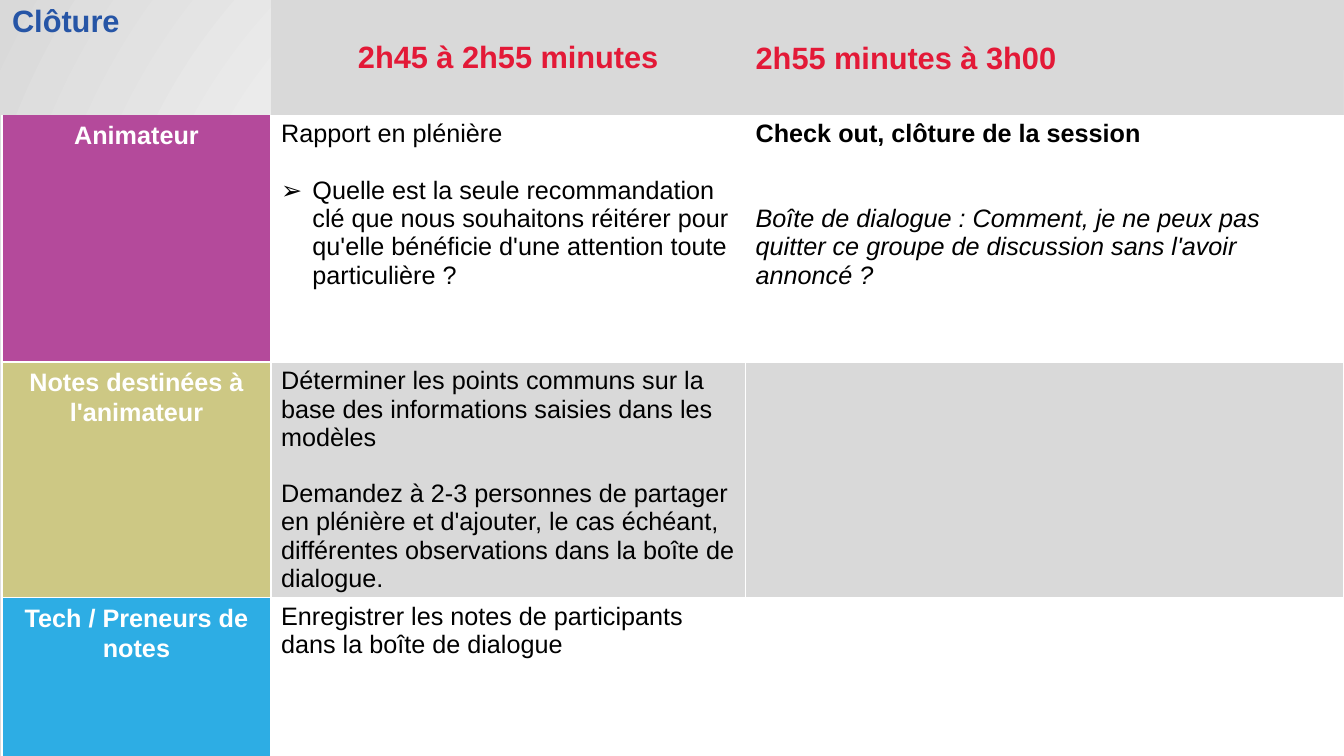
"""Build the closing-session agenda slide with its facilitator table."""
import pptx
import pptx.dml.color
import pptx.enum.text
import pptx.oxml
import pptx.oxml.ns
import pptx.util
from pptx.util import Cm

COLORS = {
    "title": "2655A6", "time": "E31937", "white": "FFFFFF", "black": "000000",
    "grey": "D9D9D9", "light": "F2F2F2",
    "host": "B44A9B", "notes": "CDC884", "tech": "2DADE4",
}
COLUMN_WIDTHS = (6.78, 11.96, 15.06)
ROW_HEIGHTS = (2.9, 6.22, 5.56, 4.37)
BLANK_LINE = 20.2
NS = pptx.oxml.ns.nsdecls("a")
CENTER = pptx.enum.text.PP_ALIGN.CENTER
LEFT = pptx.enum.text.PP_ALIGN.LEFT
MIDDLE = pptx.enum.text.MSO_ANCHOR.MIDDLE


def rgb(color):
    """Return the named colour."""
    return pptx.dml.color.RGBColor.from_string(COLORS[color])


def set_background(slide):
    """Give the slide a radial gradient from white to grey."""
    slide.background.fill.gradient()
    gradient = slide.element.find(".//" + pptx.oxml.ns.qn("a:gradFill"))
    for child in list(gradient):
        gradient.remove(child)
    stops = "".join(
        f'<a:gs pos="{place * 1000}"><a:srgbClr val="{COLORS[color]}"/></a:gs>'
        for place, color in ((0, "white"), (50, "light"), (100, "grey")))
    gradient.append(pptx.oxml.parse_xml(f"<a:gsLst {NS}>{stops}</a:gsLst>"))
    gradient.append(pptx.oxml.parse_xml(
        f'<a:path {NS} path="circle">'
        '<a:fillToRect l="50000" t="50000" r="50000" b="50000"/></a:path>'))


def style_cell(cell, fill, sides):
    """Fill a cell and draw white borders on the given sides."""
    if fill:
        cell.fill.solid()
        cell.fill.fore_color.rgb = rgb(fill)
    else:
        cell.fill.background()
    properties = cell._tc.get_or_add_tcPr()
    for position, side in enumerate("LRTB"):
        paint = "<a:noFill/>"
        if side in sides:
            paint = f'<a:solidFill><a:srgbClr val="{COLORS["white"]}"/></a:solidFill>'
        properties.insert(position, pptx.oxml.parse_xml(
            f'<a:ln{side} {NS} w="12700">{paint}</a:ln{side}>'))


def add_text(cell, text, color="black", size=18, bold=False, italic=False,
             align=LEFT, spacing=1.0, gap=0, bullet=None):
    """Write one paragraph into a cell, after a gap counted in lines."""
    paragraph = cell.text_frame.paragraphs[0]
    if paragraph.runs:
        paragraph = cell.text_frame.add_paragraph()
    paragraph.alignment = align
    paragraph.line_spacing = spacing
    paragraph.space_before = pptx.util.Pt(gap * BLANK_LINE)
    if bullet:
        properties = paragraph._p.get_or_add_pPr()
        properties.set("marL", str(Cm(0.79)))
        properties.set("indent", str(-Cm(0.79)))
        properties.append(pptx.oxml.parse_xml(f'<a:buFont {NS} typeface="Arial"/>'))
        properties.append(pptx.oxml.parse_xml(f'<a:buChar {NS} char="{bullet}"/>'))
    run = paragraph.add_run()
    run.text = text
    run.font.name = "Arial"
    run.font.size = pptx.util.Pt(size)
    run.font.bold = bold
    run.font.italic = italic
    run.font.color.rgb = rgb(color)


def add_agenda(slide):
    """Add the empty agenda table with its column and row sizes."""
    agenda = slide.shapes.add_table(
        len(ROW_HEIGHTS), len(COLUMN_WIDTHS),
        Cm(0.05), Cm(0), Cm(sum(COLUMN_WIDTHS)), Cm(19.84)).table
    agenda.first_row = False
    agenda.horz_banding = False
    for column, width in zip(agenda.columns, COLUMN_WIDTHS):
        column.width = Cm(width)
    for row, height in zip(agenda.rows, ROW_HEIGHTS):
        row.height = Cm(height)
    return agenda


def fill_header(agenda):
    """Write the session title and the two time slots."""
    title, report_time, checkout_time = agenda.rows[0].cells
    style_cell(title, None, "")
    add_text(title, "Clôture", "title", 22, bold=True)
    for slot, text, align, spacing in (
            (report_time, "2h45 à 2h55 minutes", CENTER, 1.0),
            (checkout_time, "2h55 minutes à 3h00", LEFT, 1.07)):
        style_cell(slot, "grey", "")
        slot.vertical_anchor = MIDDLE
        add_text(slot, text, "time", 22, bold=True, align=align, spacing=spacing)


def fill_role(agenda, index, role, role_color, fill, sides, report, checkout=()):
    """Write one role's row: its name and its tasks in both time slots."""
    role_cell, report_cell, checkout_cell = agenda.rows[index].cells
    style_cell(role_cell, role_color, sides)
    add_text(role_cell, role, "white", bold=True, align=CENTER, spacing=1.07)
    for cell, tasks in ((report_cell, report), (checkout_cell, checkout)):
        style_cell(cell, fill, sides)
        for text, options in tasks:
            add_text(cell, text, **options)


def main():
    """Build and save the slide."""
    deck = pptx.Presentation()
    deck.slide_width, deck.slide_height = Cm(33.87), Cm(19.05)
    slide = deck.slides.add_slide(deck.slide_layouts[6])
    set_background(slide)
    agenda = add_agenda(slide)
    fill_header(agenda)
    fill_role(
        agenda, 1, "Animateur", "host", "white", "LRB",
        [("Rapport en plénière", {}),
         ("Quelle est la seule recommandation clé que nous souhaitons réitérer "
          "pour qu'elle bénéficie d'une attention toute particulière ?",
          {"gap": 1, "bullet": "➢"})],
        [("Check out, clôture de la session", {"bold": True}),
         ("Boîte de dialogue : Comment, je ne peux pas quitter ce groupe de "
          "discussion sans l'avoir annoncé ?", {"gap": 2, "italic": True})])
    fill_role(
        agenda, 2, "Notes destinées à l'animateur", "notes", "grey", "LRTB",
        [("Déterminer les points communs sur la base des informations saisies "
          "dans les modèles", {}),
         ("Demandez à 2-3 personnes de partager en plénière et d'ajouter, le cas "
          "échéant, différentes observations dans la boîte de dialogue.",
          {"gap": 1})])
    fill_role(
        agenda, 3, "Tech / Preneurs de notes", "tech", "white", "LRTB",
        [("Enregistrer les notes de participants dans la boîte de dialogue", {})])
    deck.save("out.pptx")


if __name__ == "__main__":
    main()
